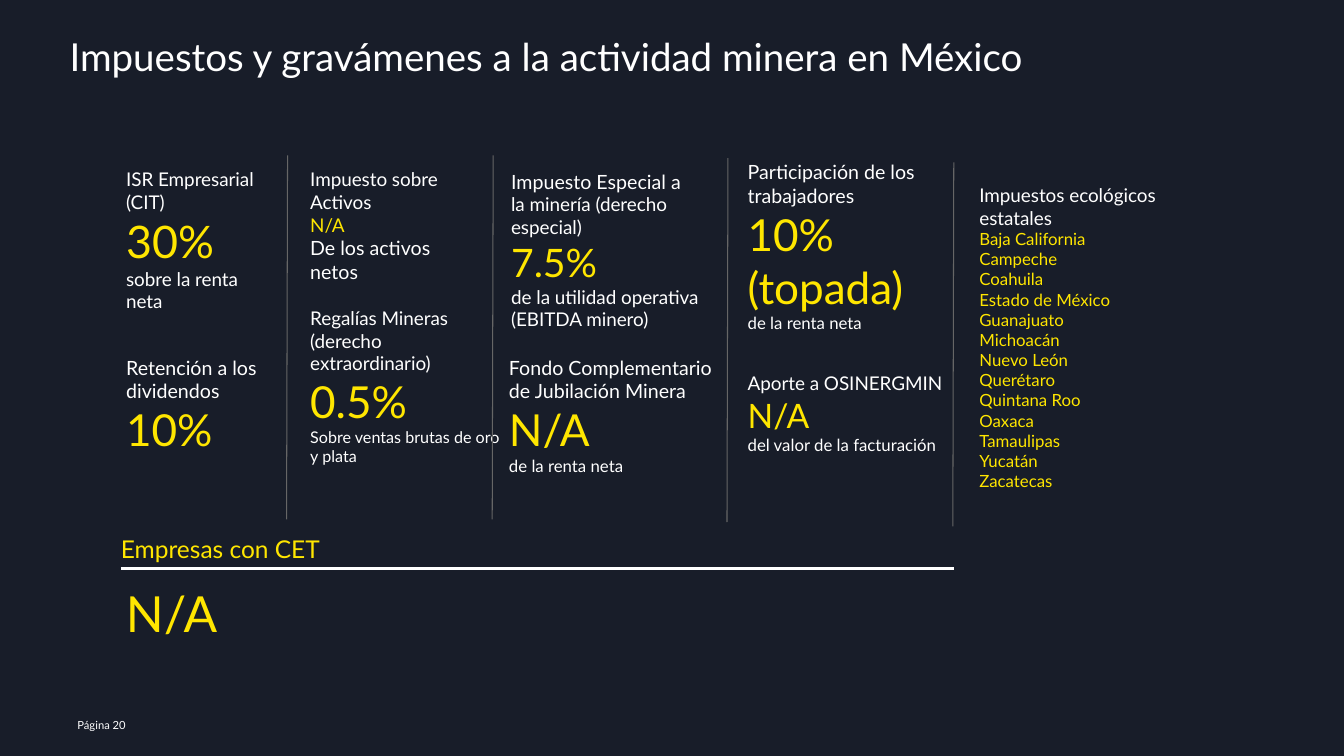
from pptx import Presentation
from pptx.dml.color import RGBColor
from pptx.enum.shapes import MSO_CONNECTOR
from pptx.enum.text import MSO_ANCHOR, PP_ALIGN
from pptx.oxml.ns import qn
from pptx.util import Pt
from lxml.etree import SubElement

COLORS = {"night": "181D29", "white": "FFFFFF", "yellow": "FFE600", "gray": "666666"}
FONT = "Lato"

LEVIES = [
    (0, 5.5, 122, 95, [
        ("ISR Empresarial (CIT)", 13.5, "white"),
        ("30%", 32, "yellow"),
        ("sobre la renta neta", 13.5, "white")]),
    (0, 139.5, 115, 80, [
        ("Retención a los dividendos", 14, "white"),
        ("10%", 31.5, "yellow")]),
    (131.5, 5.5, 122, 90, [
        ("Impuesto sobre Activos", 13.5, "white"),
        ("N/A", 13.5, "yellow"),
        ("De los activos netos", 14, "white")]),
    (131.5, 104.5, 153.5, 122, [
        ("Regalías Mineras (derecho extraordinario)", 13.5, "white"),
        ("0.5%", 31.5, "yellow"),
        ("Sobre ventas brutas de oro y plata", 11.5, "white")]),
    (275, 6.5, 169, 156, [
        ("Impuesto Especial a", 14, "white"),
        ("la minería (derecho especial)", 13.5, "white"),
        ("7.5%", 28, "yellow"),
        ("de la utilidad operativa (EBITDA minero)", 13.5, "white")]),
    (273.5, 139.5, 163, 94, [
        ("Fondo Complementario", 14, "white"),
        ("de Jubilación Minera", 14, "white"),
        ("N/A", 31.5, "yellow"),
        ("de la renta neta", 12, "white")]),
    (444, 0, 165.5, 133, [
        ("Participación de los trabajadores", 14, "white"),
        ("10% (topada)", 31.5, "yellow"),
        ("de la renta neta", 12, "white")]),
    (444, 151, 168.5, 67, [
        ("Aporte a OSINERGMIN", 13.5, "white"),
        ("N/A", 24, "yellow"),
        ("del valor de la facturación", 12, "white")]),
]
DIVIDERS = [(122.4, 0), (269.3, 0), (437, 2), (598.3, 5)]
STATES = ["Baja California", "Campeche", "Coahuila", "Estado de México", "Guanajuato",
          "Michoacán", "Nuevo León", "Querétaro", "Quintana Roo", "Oaxaca",
          "Tamaulipas", "Yucatán", "Zacatecas"]


def rgb(name):
    return RGBColor.from_string(COLORS[name])


def write(frame, entries, insets=(7.2, 3.6, 7.2, 3.6), line_spacing=None):
    frame.word_wrap = True
    frame.vertical_anchor = MSO_ANCHOR.TOP
    frame.margin_left, frame.margin_top, frame.margin_right, frame.margin_bottom = map(Pt, insets)
    for index, (text, size, color) in enumerate(entries):
        paragraph = frame.add_paragraph() if index else frame.paragraphs[0]
        paragraph.alignment = PP_ALIGN.LEFT
        paragraph.line_spacing = line_spacing
        run = paragraph.add_run()
        run.text = text
        run.font.name = FONT
        run.font.size = Pt(size)
        run.font.color.rgb = rgb(color)


def add_text(slide, box, entries, **text_format):
    write(slide.shapes.add_textbox(*map(Pt, box)).text_frame, entries, **text_format)


def add_rule(slide, ends, color, width):
    rule = slide.shapes.add_connector(MSO_CONNECTOR.STRAIGHT, *map(Pt, ends))
    rule.line.color.rgb = rgb(color)
    rule.line.width = Pt(width)
    SubElement(rule._element.spPr, qn("a:effectLst"))


def add_heading(slide, box):
    heading = slide.shapes.title
    heading.left, heading.top, heading.width, heading.height = map(Pt, box)
    write(heading.text_frame,
          [("Impuestos y gravámenes a la actividad minera en México", 27.5, "white")],
          insets=(0, 0, 0, 0), line_spacing=0.85)


def add_levies(slide, box):
    left, top, width, height = box
    for x, y, levy_width, levy_height, entries in LEVIES:
        add_text(slide, (left + x, top + y, levy_width, levy_height), entries)
    for x, y in DIVIDERS:
        add_rule(slide, (left + x, top + y, left + x - 0.7, top + y + height), "gray", 0.75)


def add_ecological_taxes(slide, box):
    entries = [("Impuestos ecológicos estatales", 13.5, "white")]
    entries += [(state, 12, "yellow") for state in STATES]
    add_text(slide, box, entries)


def add_cet_companies(slide, box):
    left, top, width, height = box
    add_text(slide, (left, top, width, 22), [("Empresas con CET", 17.5, "yellow")],
             insets=(0, 2.9, 0, 0), line_spacing=0.85)
    add_rule(slide, (left, top + 24.5, left + width, top + 24.5), "white", 1.5)
    add_text(slide, (left - 3.5, top + 31, 120, height - 31), [("N/A", 35.5, "yellow")])


def add_page_number(slide, box):
    add_text(slide, box, [("Página 20", 8, "white")])


def main():
    deck = Presentation()
    deck.slide_width, deck.slide_height = Pt(960), Pt(540)
    slide = deck.slides.add_slide(deck.slide_layouts[5])
    slide.background.fill.solid()
    slide.background.fill.fore_color.rgb = rgb("night")
    add_heading(slide, (49.7, 28.8, 793, 34))
    add_levies(slide, (83, 111, 609, 260))
    add_ecological_taxes(slide, (692.5, 127.5, 185, 229))
    add_cet_companies(slide, (86.4, 381.6, 594.7, 98))
    add_page_number(slide, (48.2, 509.8, 67, 14.4))
    deck.save("out.pptx")


if __name__ == "__main__":
    main()
